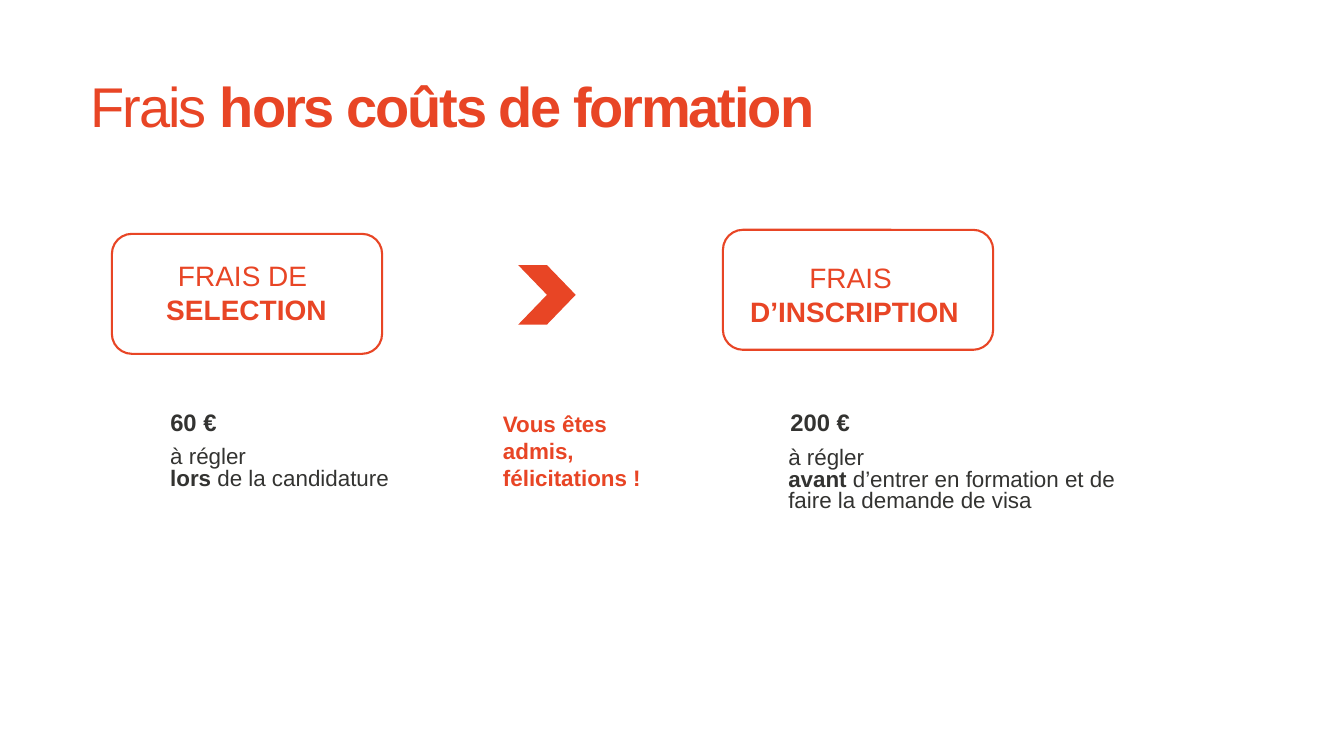
from pptx import Presentation
from pptx.dml.color import RGBColor
from pptx.enum.shapes import MSO_SHAPE
from pptx.enum.text import MSO_ANCHOR, PP_ALIGN
from pptx.util import Inches, Pt

ORANGE = RGBColor(0xE8, 0x45, 0x25)
DARK = RGBColor(0x33, 0x33, 0x31)
WHITE = RGBColor(0xFF, 0xFF, 0xFF)
ROUNDED, CHEVRON, RECTANGLE = (
    MSO_SHAPE.ROUNDED_RECTANGLE, MSO_SHAPE.CHEVRON, MSO_SHAPE.RECTANGLE)
LEFT, CENTER = PP_ALIGN.LEFT, PP_ALIGN.CENTER
TOP, MIDDLE = MSO_ANCHOR.TOP, MSO_ANCHOR.MIDDLE
BREAK = ("\n", False)


class FeeSlide:
    """Draws the elements of the fee slide in one shared style."""

    font_name = "Arial"

    def __init__(self, page):
        self.page = page

    def shape(self, kind, area, fill=None, line=None):
        shape = self.page.shapes.add_shape(kind, *map(Inches, area))
        shape.shadow.inherit = False
        if fill is None:
            shape.fill.background()
        else:
            shape.fill.solid()
            shape.fill.fore_color.rgb = fill
        if line is None:
            shape.line.fill.background()
        else:
            shape.line.color.rgb = line
            shape.line.width = Pt(1.5)
        return shape

    def text(self, area, paragraphs, size, color, **options):
        box = self.page.shapes.add_textbox(*map(Inches, area))
        self.fill_text(box, paragraphs, size, color, **options)

    def fill_text(self, box, paragraphs, size, color, align=LEFT, anchor=TOP,
                  line_spacing=None, tracking=None):
        frame = box.text_frame
        frame.word_wrap = True
        frame.vertical_anchor = anchor
        for index, spans in enumerate(paragraphs):
            para = frame.add_paragraph() if index else frame.paragraphs[0]
            formats = {"alignment": align, "line_spacing": line_spacing}
            for name, value in formats.items():
                setattr(para, name, value)
            for item in spans:
                if item == BREAK:
                    para.add_line_break()
                else:
                    self.span(para, *item, size, color, tracking)

    def span(self, para, text, bold, size, color, tracking):
        span = para.add_run()
        span.text = text
        formats = {"name": self.font_name, "size": Pt(size), "bold": bold}
        for name, value in formats.items():
            setattr(span.font, name, value)
        span.font.color.rgb = color
        if tracking is not None:
            span._r.get_or_add_rPr().set("spc", str(int(tracking * 100)))

    def fee_label(self, frame_at, text_at, first, second):
        self.shape(ROUNDED, (*frame_at, 2.68, 1.19), line=ORANGE)
        self.text((*text_at, 2.69, 0.77),
                  [[(first, False), BREAK, (second, True)]],
                  20, ORANGE, align=CENTER)

    def amount(self, left, text, fill=None):
        box = self.shape(RECTANGLE, (left, 3.65, 2.75, 1.07), fill=fill)
        self.fill_text(box, [[(text, True)]], 17, DARK, anchor=MIDDLE)

    def condition(self, area, paragraphs):
        self.text(area, paragraphs, 16, DARK, line_spacing=0.8)


def main():
    deck = Presentation()
    deck.slide_width, deck.slide_height = Inches(13.33), Inches(7.5)
    slide = FeeSlide(deck.slides.add_slide(deck.slide_layouts[6]))

    slide.amount(1.59, "60 €", fill=WHITE)
    slide.text((0.8, 0.74, 10.18, 0.91),
               [[("Frais ", False), ("hors coûts de formation", True)]],
               40, ORANGE, line_spacing=0.9, tracking=-1.5)
    slide.shape(CHEVRON, (5.14, 2.63, 0.57, 0.59), fill=ORANGE)
    slide.fee_label((7.17, 2.28), (7.13, 2.54), "FRAIS ", "D’INSCRIPTION")
    slide.fee_label((1.11, 2.32), (1.1, 2.52), "FRAIS DE ", "SELECTION")
    slide.text((4.89, 4.02, 1.89, 0.33),
               [[("Vous êtes admis, félicitations !", True)]],
               16, ORANGE, line_spacing=1.01)
    slide.condition((7.72, 4.4, 3.47, 0.33), [
        [("à régler ", False), BREAK, ("avant", True),
         (" d’entrer en formation et de faire la demande de visa", False)]])
    slide.condition((1.59, 4.39, 3.14, 0.33), [
        [("à régler", False)],
        [("lors", True), (" de la candidature", False)]])
    slide.amount(7.74, "200 €")

    deck.save("out.pptx")


if __name__ == "__main__":
    main()
